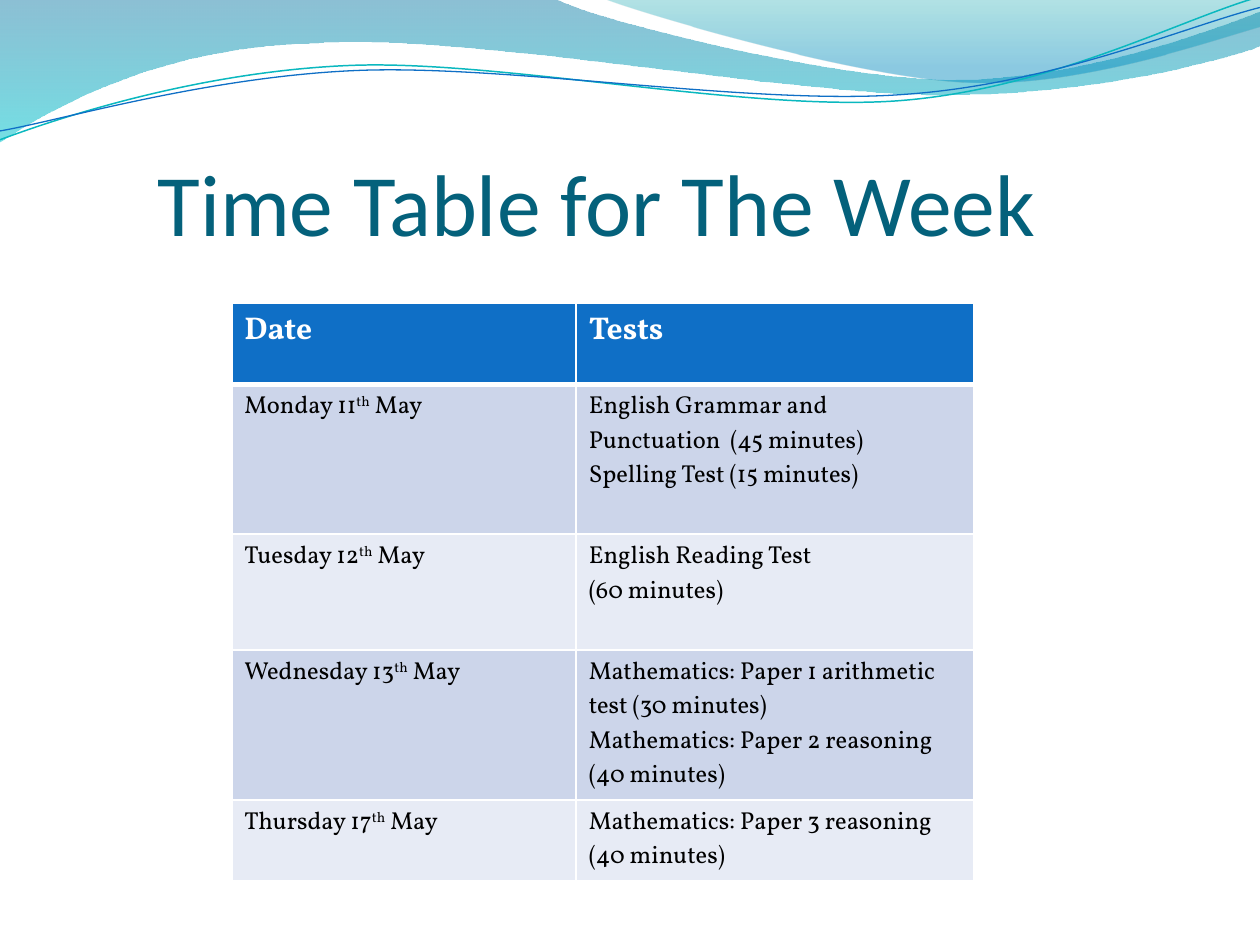
from math import cos, radians, sin

from lxml.etree import SubElement
from pptx import Presentation
from pptx.dml.color import RGBColor
from pptx.enum.text import MSO_ANCHOR, PP_ALIGN
from pptx.oxml.ns import qn
from pptx.util import Inches, Pt

SLIDE_W, SLIDE_H = 10, 7.5

WHITE = RGBColor(0xFF, 0xFF, 0xFF)
BLACK = RGBColor(0x00, 0x00, 0x00)
BLUE = RGBColor(0x0F, 0x6F, 0xC6)
TEAL = RGBColor(0x0A, 0xB8, 0xBF)
TITLE_TEAL = RGBColor(0x04, 0x61, 0x7B)
BANDS = RGBColor(0xCC, 0xD5, 0xEA), RGBColor(0xE7, 0xEB, 0xF5)

# Gradient stops: position, colour, opacity in percent
BACK_STOPS = [(0, RGBColor(0x00, 0x74, 0xA1), 45), (1, RGBColor(0x00, 0xC6, 0xCF), 55)]
FRONT_STOPS = [(0, RGBColor(0x00, 0xA1, 0xA9), 30), (0.8, RGBColor(0x00, 0x8B, 0xBF), 45)]

# Wave outlines in inches: a pair is a straight step, six numbers a Bezier step
BACK_WAVE = [
    (0, 0), (4.4, -0.01),
    (4.76, 0.17, 6.64, 0.63, 7.58, 0.63), (8.53, 0.63, 9.58, 0.26, 10, 0.09),
    (10.01, 0.36),
    (9.83, 0.44, 8.7, 0.76, 7.46, 0.75), (6.22, 0.75, 3.82, 0.28, 2.57, 0.34),
    (1.29, 0.36, 0.46, 0.83, -0.01, 1.13),
]
FRONT_WAVE = [
    (4.79, -0.01),
    (5.09, 0.11, 6.82, 0.62, 7.69, 0.65), (8.56, 0.69, 9.61, 0.32, 10, 0.21),
    (10, 0),
]
TEAL_CURVE = [
    (0, 1.11),
    (0.48, 0.93, 1.58, 0.57, 2.77, 0.52), (3.95, 0.47, 5.93, 0.89, 7.13, 0.8),
    (8.33, 0.71, 9.38, 0.15, 9.98, -0.02),
]
BLUE_CURVE = [
    (0, 1.04),
    (0.47, 0.96, 1.64, 0.61, 2.83, 0.56), (4.03, 0.51, 5.97, 0.84, 7.17, 0.75),
    (8.36, 0.67, 9.41, 0.21, 10, 0.06),
]
CURVE_TILT = -2.7

# A caret encloses superscript text
HEADINGS = ["Date", "Tests"]
TIMETABLE = [
    ("Monday 11^th^ May",
     ["English Grammar and Punctuation  (45 minutes)", "Spelling Test (15 minutes)"]),
    ("Tuesday 12^th^ May", ["English Reading Test", "(60 minutes)"]),
    ("Wednesday 13^th^ May",
     ["Mathematics: Paper 1 arithmetic test (30 minutes)",
      "Mathematics: Paper 2 reasoning (40 minutes)"]),
    ("Thursday 17^th^ May", ["Mathematics: Paper 3 reasoning", "(40 minutes)"]),
]
COLUMN_SHARES = [0.464, 0.536]
ROW_HEIGHTS = [0.64, 1.19, 0.92, 1.19, 0.64]


def write(frame, *lines, font, size, color, bold=False, align=PP_ALIGN.LEFT):
    """Write one paragraph per line, raising what stands between carets."""
    for number, line in enumerate(lines):
        paragraph = frame.paragraphs[0] if number == 0 else frame.add_paragraph()
        paragraph.alignment = align
        for part, text in enumerate(line.split("^")):
            run = paragraph.add_run()
            run.text = text
            run.font.name, run.font.size, run.font.bold = font, Pt(size), bold
            run.font.color.rgb = color
            if part % 2:
                run.font._element.set("baseline", "30000")


def points_of(step):
    return list(zip(step[::2], step[1::2]))


def turn(steps, degrees):
    """Turn the steps about the middle of their end points."""
    ends = [step[-2:] for step in steps]
    mid_x, mid_y = ((min(axis) + max(axis)) / 2 for axis in zip(*ends))
    c, s = cos(radians(degrees)), sin(radians(degrees))
    return [
        [value for x, y in points_of(step)
         for value in (mid_x + (x - mid_x) * c - (y - mid_y) * s,
                       mid_y + (x - mid_x) * s + (y - mid_y) * c)]
        for step in steps]


def draw_outline(slide, steps, closed):
    """Build the outline through its end points, then bend the Bezier steps."""
    builder = slide.shapes.build_freeform(*map(Inches, steps[0]))
    builder.add_line_segments(
        [tuple(map(Inches, step[-2:])) for step in steps[1:]], close=closed)
    outline = builder.convert_to_shape()
    outline.shadow.inherit = False
    straight = list(outline._element.iter(qn("a:lnTo")))
    for segment, step in zip(straight, steps[1:]):
        if len(step) == 6:
            bend = SubElement(segment.getparent(), qn("a:cubicBezTo"))
            for x, y in points_of(step):
                SubElement(bend, qn("a:pt"), x=str(Inches(x) - outline.left),
                           y=str(Inches(y) - outline.top))
            segment.getparent().replace(segment, bend)
    return outline


def add_wave(slide, steps, stops):
    wave = draw_outline(slide, steps, closed=True)
    wave.line.fill.background()
    wave.fill.gradient()
    wave.fill.gradient_angle = 270
    for stop, (position, color, opacity) in zip(wave.fill.gradient_stops, stops):
        stop.position = position
        stop.color.rgb = color
        rgb = stop._gs.find(qn("a:srgbClr"))
        SubElement(rgb, qn("a:alpha"), val=str(opacity * 1000))


def add_curve(slide, steps, color, width):
    curve = draw_outline(slide, turn(steps, -CURVE_TILT), closed=False)
    curve.rotation = CURVE_TILT
    curve.fill.background()
    curve.line.color.rgb = color
    curve.line.width = Pt(width)


def add_header_waves(slide):
    add_wave(slide, BACK_WAVE, BACK_STOPS)
    add_wave(slide, FRONT_WAVE, FRONT_STOPS)
    add_curve(slide, TEAL_CURVE, TEAL, 0.85)
    add_curve(slide, BLUE_CURVE, BLUE, 0.75)


def place_title(slide, left, top, width, height):
    title = slide.shapes.title
    title.left, title.top = Inches(left), Inches(top)
    title.width, title.height = Inches(width), Inches(height)
    frame = title.text_frame
    frame.margin_left = frame.margin_right = frame.margin_bottom = 0
    frame.vertical_anchor = MSO_ANCHOR.BOTTOM
    write(frame, "Time Table for The Week", font="Calibri", size=50, color=TITLE_TEAL)
    slide.shapes._spTree.append(title._element)  # in front of the waves


def format_cell(cell, fill, bottom=1, top=1):
    """Give the cell white borders, then its fill."""
    properties = cell._tc.get_or_add_tcPr()
    for side, points in zip("LRTB", (1, 1, top, bottom)):
        border = SubElement(properties, qn(f"a:ln{side}"), w=str(Pt(points)))
        solid = SubElement(border, qn("a:solidFill"))
        SubElement(solid, qn("a:srgbClr"), val=str(WHITE))
    cell.fill.solid()
    cell.fill.fore_color.rgb = fill


def add_timetable(slide, left, top, width):
    table = slide.shapes.add_table(
        len(ROW_HEIGHTS), len(COLUMN_SHARES), Inches(left), Inches(top),
        Inches(width), Inches(sum(ROW_HEIGHTS))).table
    table.horz_banding = False
    for column, share in zip(table.columns, COLUMN_SHARES):
        column.width = Inches(width * share)
    for row, height in zip(table.rows, ROW_HEIGHTS):
        row.height = Inches(height)

    for column, heading in enumerate(HEADINGS):
        cell = table.cell(0, column)
        format_cell(cell, BLUE, bottom=3)
        write(cell.text_frame, heading, font="Vollkorn", size=18, color=WHITE, bold=True)
    for row, (date, tests) in enumerate(TIMETABLE, start=1):
        for column, lines in enumerate(([date], tests)):
            cell = table.cell(row, column)
            format_cell(cell, BANDS[(row - 1) % 2], top=3 if row == 1 else 1)
            write(cell.text_frame, *lines, font="Vollkorn", size=14, color=BLACK)


def main():
    deck = Presentation()
    deck.slide_width, deck.slide_height = Inches(SLIDE_W), Inches(SLIDE_H)
    slide = deck.slides.add_slide(deck.slide_layouts[5])  # title only
    add_header_waves(slide)
    place_title(slide, SLIDE_W / 8, 0.77, 7.22, SLIDE_H / 6)
    add_timetable(slide, 1.84, 2.41, 5.89)
    deck.save("out.pptx")


if __name__ == "__main__":
    main()
